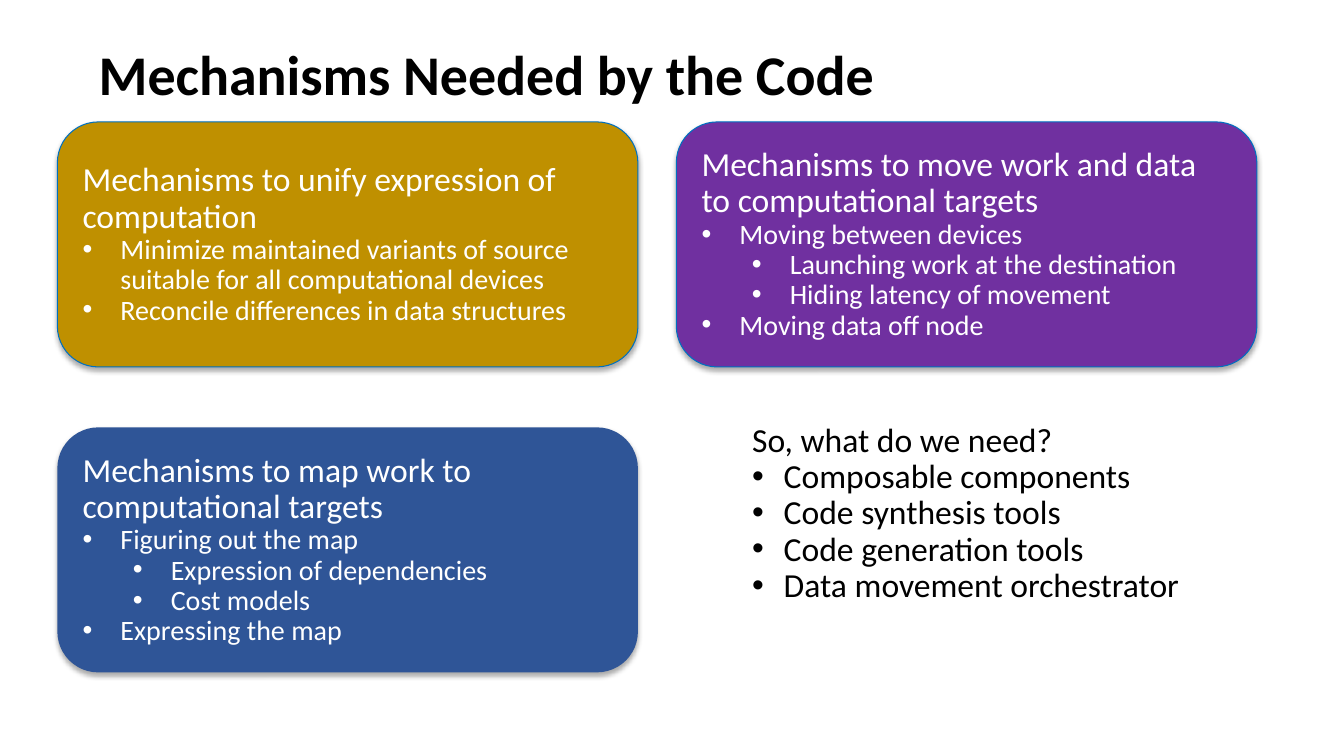
"""Build the slide on the mechanisms needed by the code."""
from dataclasses import dataclass
from typing import Optional

from lxml.etree import SubElement
from pptx import Presentation
from pptx.dml.color import RGBColor
from pptx.enum.shapes import MSO_SHAPE
from pptx.enum.text import MSO_ANCHOR, MSO_AUTO_SIZE, PP_ALIGN
from pptx.oxml.ns import qn
from pptx.slide import Slide
from pptx.text.text import TextFrame
from pptx.util import Pt

FONT = "Calibri"
BLACK = RGBColor(0x00, 0x00, 0x00)
WHITE = RGBColor(0xFF, 0xFF, 0xFF)
BLUE = RGBColor(0x2F, 0x55, 0x97)
PURPLE = RGBColor(0x70, 0x30, 0xA0)
GOLD = RGBColor(0xBF, 0x90, 0x00)
OUTLINE = RGBColor(0x00, 0x70, 0xC0)

CARD_LEFT, CARD_TOP = 41, 87.1
CARD_WIDTH, CARD_HEIGHT = 414.7, 175
COLUMN_PITCH, ROW_PITCH = 442.1, 218.2
CARD_HANG, NEEDS_HANG, LEVEL_STEP = 27, 22.5, 36


@dataclass(frozen=True)
class Line:
    text: str
    size: float
    hang: float = 0
    level: int = 0
    bold: bool = False


@dataclass(frozen=True)
class Card:
    column: int
    row: int
    fill: RGBColor
    outline: Optional[RGBColor]
    lines: tuple[Line, ...]


def heading(text: str) -> Line:
    return Line(text, 24)


def point(text: str, level: int = 0) -> Line:
    return Line(text, 20, CARD_HANG, level)


def need(text: str) -> Line:
    return Line(text, 24, NEEDS_HANG)


CARDS = (
    Card(0, 1, BLUE, None, (
        heading("Mechanisms to map work to computational targets"),
        point("Figuring out the map"),
        point("Expression of dependencies", 1),
        point("Cost models", 1),
        point("Expressing the map"),
    )),
    Card(1, 0, PURPLE, OUTLINE, (
        heading("Mechanisms to move work and data to computational targets"),
        point("Moving between devices"),
        point("Launching work at the destination", 1),
        point("Hiding latency of movement", 1),
        point("Moving data off node"),
    )),
    Card(0, 0, GOLD, OUTLINE, (
        heading("Mechanisms to unify expression of computation"),
        point("Minimize maintained variants of source suitable for all computational devices"),
        point("Reconcile differences in data structures"),
    )),
)
TITLE = (Line("Mechanisms Needed by the Code", 40, bold=True),)
NEEDS = (
    heading("So, what do we need?"),
    need("Composable components"),
    need("Code synthesis tools"),
    need("Code generation tools"),
    need("Data movement orchestrator"),
)


def write_lines(frame: TextFrame, lines: tuple[Line, ...], color: RGBColor,
                side: float, edge: float, wrap: bool = True) -> None:
    frame.word_wrap = wrap
    frame.vertical_anchor = MSO_ANCHOR.MIDDLE
    frame.margin_left = frame.margin_right = Pt(side)
    frame.margin_top = frame.margin_bottom = Pt(edge)
    for index, line in enumerate(lines):
        para = frame.add_paragraph() if index else frame.paragraphs[0]
        if line.hang:
            properties = para._p.get_or_add_pPr()
            properties.set("marL", str(Pt(line.hang + LEVEL_STEP * line.level)))
            properties.set("indent", str(Pt(-line.hang)))
            SubElement(properties, qn("a:buFont"), typeface="Arial")
            SubElement(properties, qn("a:buChar"), char="•")
        para.level = line.level
        para.alignment = PP_ALIGN.LEFT
        para.line_spacing = 0.9
        span = para.add_run()
        span.text = line.text
        span.font.name = FONT
        span.font.size = Pt(line.size)
        span.font.bold = line.bold
        span.font.color.rgb = color


def add_text(page: Slide, left: float, top: float, width: float, height: float) -> TextFrame:
    return page.shapes.add_textbox(Pt(left), Pt(top), Pt(width), Pt(height)).text_frame


def add_card(page: Slide, card: Card) -> None:
    box = page.shapes.add_shape(
        MSO_SHAPE.ROUNDED_RECTANGLE,
        Pt(CARD_LEFT + card.column * COLUMN_PITCH),
        Pt(CARD_TOP + card.row * ROW_PITCH),
        Pt(CARD_WIDTH), Pt(CARD_HEIGHT))
    box.fill.solid()
    box.fill.fore_color.rgb = card.fill
    if card.outline is None:
        box.line.fill.background()
    else:
        box.line.color.rgb = card.outline
        box.line.width = Pt(0.75)
    box.shadow.inherit = False
    effects = box._element.spPr.find(qn("a:effectLst"))
    shadow = SubElement(effects, qn("a:outerShdw"), blurRad=str(Pt(3.5)),
                        dist=str(Pt(2.2)), dir="5400000", rotWithShape="0")
    tint = SubElement(shadow, qn("a:srgbClr"), val=str(BLACK))
    SubElement(tint, qn("a:alpha"), val="32000")
    write_lines(box.text_frame, card.lines, WHITE, 9.5, 4.8)


def main() -> None:
    deck = Presentation()
    deck.slide_width, deck.slide_height = Pt(960), Pt(540)
    page = deck.slides.add_slide(deck.slide_layouts[6])
    write_lines(add_text(page, 63.4, 2.9, 828, 104.4), TITLE, BLACK, 7.2, 3.6)
    for card in CARDS:
        add_card(page, card)
    needs = add_text(page, 527.8, 294.5, 335.5, 145.4)
    write_lines(needs, NEEDS, BLACK, 9.5, 7.2, wrap=False)
    needs.auto_size = MSO_AUTO_SIZE.SHAPE_TO_FIT_TEXT
    deck.save("out.pptx")


if __name__ == "__main__":
    main()
